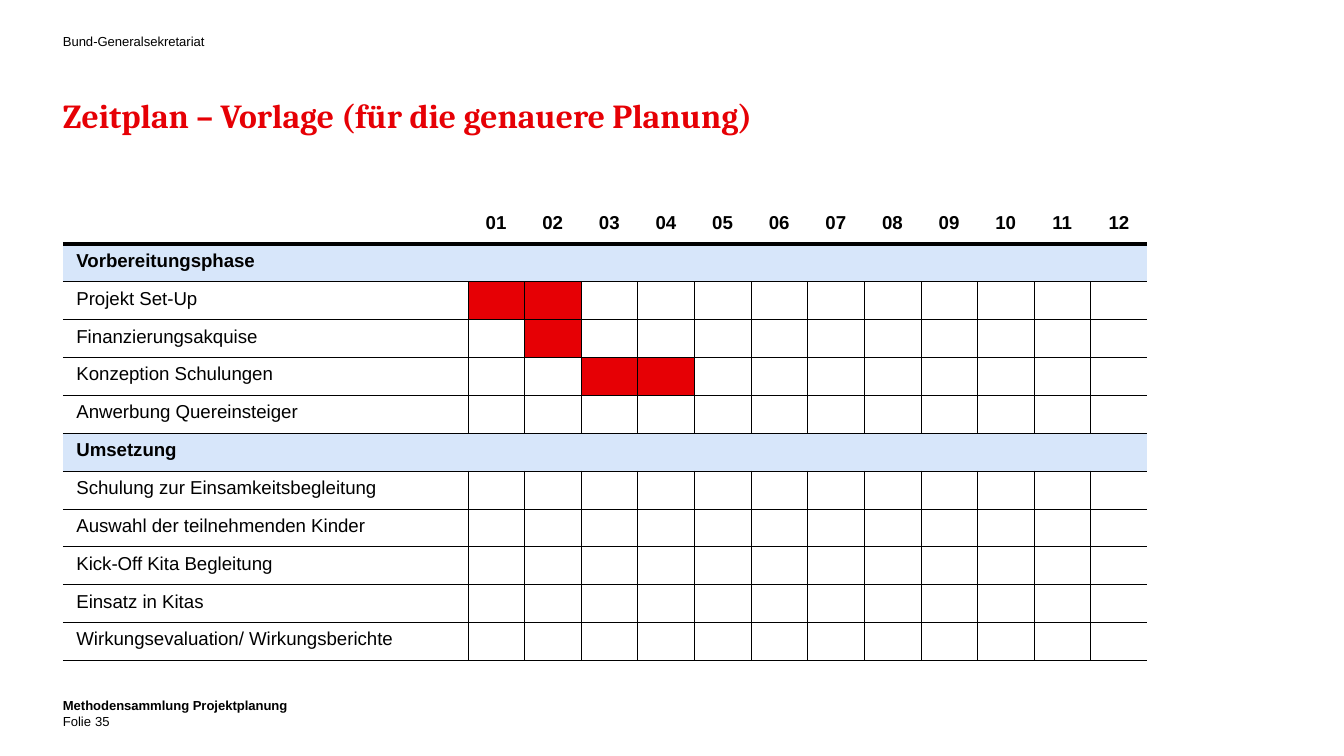
from lxml import etree
from pptx import Presentation
from pptx.dml.color import RGBColor
from pptx.enum.text import MSO_ANCHOR, MSO_AUTO_SIZE, PP_ALIGN
from pptx.oxml.ns import qn
from pptx.util import Cm, Pt

TOP, BOTTOM = MSO_ANCHOR.TOP, MSO_ANCHOR.BOTTOM
LEFT, CENTER = PP_ALIGN.LEFT, PP_ALIGN.CENTER
NO_AUTOFIT = MSO_AUTO_SIZE.NONE
TITLE_ONLY = 5
PLAIN_TABLE_STYLE = "{2D5ABB26-0587-4C30-8999-92F81FD0307C}"
COLORS = {"text": "000000", "accent": "E60005", "phase": "D7E6FA"}
MARGIN = 1.19
MONTHS = 12
THICK, THIN = 2.25, 0.25

SCHEDULE = [
    ("Vorbereitungsphase", None),
    ("Projekt Set-Up", {1, 2}),
    ("Finanzierungsakquise", {2}),
    ("Konzeption Schulungen", {3, 4}),
    ("Anwerbung Quereinsteiger", set()),
    ("Umsetzung", None),
    ("Schulung zur Einsamkeitsbegleitung", set()),
    ("Auswahl der teilnehmenden Kinder", set()),
    ("Kick-Off Kita Begleitung", set()),
    ("Einsatz in Kitas", set()),
    ("Wirkungsevaluation/ Wirkungsberichte", set()),
]


class SlideBuilder:
    def __init__(self, slide, font="Arial", title_font="Cambria"):
        self.s = slide
        self.font = font
        self.title_font = title_font

    def run(self, p, text, size, bold=False, color="text", font=None):
        r = p.add_run()
        r.text = text
        r.font.name = font or self.font
        r.font.size = Pt(size)
        r.font.bold = bold
        r.font.color.rgb = RGBColor.from_string(COLORS[color])

    def frame(self, sp, box, anchor, spacing):
        sp.left, sp.top, sp.width, sp.height = (Cm(v) for v in box)
        tf = sp.text_frame
        tf.margin_left = tf.margin_right = tf.margin_top = tf.margin_bottom = 0
        tf.auto_size = NO_AUTOFIT
        tf.word_wrap = True
        tf.vertical_anchor = anchor
        p = tf.paragraphs[0]
        p.alignment = LEFT
        p.line_spacing = Pt(spacing)
        return p

    def title(self, text, box):
        p = self.frame(self.s.shapes.title, box, TOP, 24)
        self.run(p, text, 18, True, "accent", self.title_font)

    def label(self, text, box, bold=False, anchor=TOP):
        sp = self.s.shapes.add_textbox(0, 0, 0, 0)
        self.run(self.frame(sp, box, anchor, 9), text, 7, bold)

    def borders(self, cell, widths):
        tc_pr = cell._tc.get_or_add_tcPr()
        for side in "LRTB":
            width = widths.get(side, 0)
            ln = etree.SubElement(tc_pr, qn(f"a:ln{side}"), w=str(Pt(width)))
            if width:
                fill = etree.SubElement(ln, qn("a:solidFill"))
                etree.SubElement(fill, qn("a:srgbClr"), val=COLORS["text"])
            else:
                etree.SubElement(ln, qn("a:noFill"))

    def cell(self, cell, text, widths, fill=None, bold=False, align=LEFT):
        self.borders(cell, widths)
        if fill:
            cell.fill.solid()
            cell.fill.fore_color.rgb = RGBColor.from_string(COLORS[fill])
        else:
            cell.fill.background()
        p = cell.text_frame.paragraphs[0]
        p.alignment = align
        if text:
            self.run(p, text, 10, bold)
        else:
            etree.SubElement(p._p, qn("a:endParaRPr"), sz="1000")

    def gantt(self, schedule, left, top, height, task_width, month_width):
        width = task_width + MONTHS * month_width
        table = self.s.shapes.add_table(
            len(schedule) + 1, MONTHS + 1, Cm(left), Cm(top), Cm(width), Cm(height)
        ).table
        table.first_row = table.horz_banding = False
        table._tbl.tblPr.find(qn("a:tableStyleId")).text = PLAIN_TABLE_STYLE
        for c, column in enumerate(table.columns):
            column.width = Cm(month_width if c else task_width)
            month = f"{c:02d}" if c else ""
            self.cell(table.cell(0, c), month, {"B": THICK}, bold=True, align=CENTER)
        for r, (task, active) in enumerate(schedule, 1):
            is_phase = active is None
            for c in range(MONTHS + 1):
                widths = {"T": THICK if r == 1 else THIN, "B": THIN}
                if is_phase:
                    fill = "phase"
                else:
                    fill = "accent" if c in active else None
                    if c > 0:
                        widths["L"] = THIN
                    if c < MONTHS:
                        widths["R"] = THIN
                text = "" if c else task
                self.cell(table.cell(r, c), text, widths, fill, is_phase)


def main():
    prs = Presentation()
    prs.slide_width, prs.slide_height = Cm(25.4), Cm(14.28)
    slide = SlideBuilder(prs.slides.add_slide(prs.slide_layouts[TITLE_ONLY]))
    slide.label("Bund-Generalsekretariat", (MARGIN, 0.61, 4.55, 0.3))
    slide.title("Zeitplan – Vorlage (für die genauere Planung)", (MARGIN, 1.7, 20.48, 0.74))
    slide.gantt(SCHEDULE, MARGIN, 3.89, 8.59, 7.65, 1.07)
    slide.label("Methodensammlung Projektplanung", (MARGIN, 13.16, 23.02, 0.23), bold=True)
    slide.label("Folie", (MARGIN, 13.44, 0.76, 0.33), anchor=BOTTOM)
    slide.label("35", (1.8, 13.46, 5.72, 0.31), anchor=BOTTOM)
    prs.save("out.pptx")


if __name__ == "__main__":
    main()
